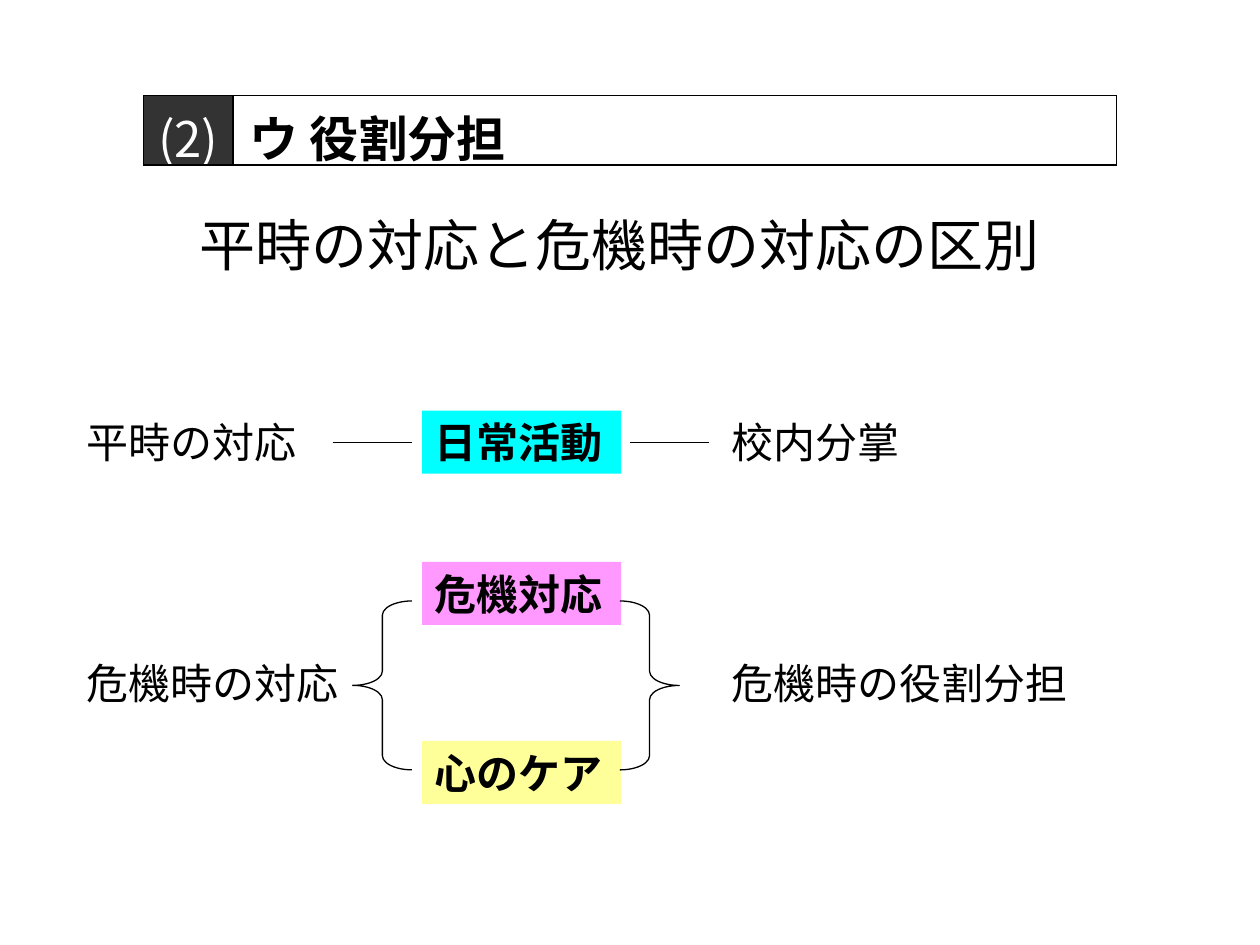
from dataclasses import dataclass

import pptx
import pptx.dml.color
import pptx.enum.shapes
import pptx.enum.text
import pptx.oxml
import pptx.util
from pptx.util import Inches

SHAPE = pptx.enum.shapes.MSO_SHAPE
ALIGN = pptx.enum.text.PP_ALIGN
ANCHOR = pptx.enum.text.MSO_ANCHOR
NS = 'xmlns:a="http://schemas.openxmlformats.org/drawingml/2006/main"'


@dataclass(frozen=True)
class Theme:
    black: str = "000000"
    white: str = "FFFFFF"
    dark: str = "333333"
    cyan: str = "00FFFF"
    pink: str = "FF99FF"
    yellow: str = "FFFF99"
    latin: str = "Arial"
    asian: str = "Noto Sans CJK JP"
    title: int = 32
    head: int = 28
    body: int = 24
    thin: float = 0.75
    border: float = 1


@dataclass(frozen=True)
class Label:
    text: str
    left: float
    top: float
    width: float
    fill: str = ""


THEME = Theme()
HEIGHT = 0.5
DAILY, CRISIS = 3.26, 5.17
LEFT, MIDDLE, RIGHT = 0.59, 3.35, 5.71
BOX = 1.58

LABELS = [
    Label("平時の対応", LEFT, DAILY, 1.97),
    Label("危機時の対応", LEFT, CRISIS, 2.36),
    Label("日常活動", MIDDLE, DAILY, BOX, THEME.cyan),
    Label("危機対応", MIDDLE, 4.46, BOX, THEME.pink),
    Label("心のケア", MIDDLE, 5.88, BOX, THEME.yellow),
    Label("校内分掌", RIGHT, DAILY, 1.97),
    Label("危機時の役割分担", RIGHT, CRISIS, 3.07),
]


def rgb(code: str):
    return pptx.dml.color.RGBColor.from_string(code)


def write(frame, text: str, size: int, face: str, color: str = THEME.black,
          bold: bool = False, align=ALIGN.LEFT) -> None:
    para = frame.paragraphs[0]
    para.text = text
    para.alignment = align
    font = para.font
    font.name, font.size, font.bold = face, pptx.util.Pt(size), bold
    font.color.rgb = rgb(color)


def stroke(line) -> None:
    line.color.rgb = rgb(THEME.black)
    line.width = pptx.util.Pt(THEME.thin)


def add_label(slide, label: Label) -> None:
    place = [Inches(n) for n in (label.left, label.top, label.width, HEIGHT)]
    if label.fill:
        shape = slide.shapes.add_shape(SHAPE.RECTANGLE, *place)
        shape.shadow.inherit = False
        shape.fill.solid()
        shape.fill.fore_color.rgb = rgb(label.fill)
        shape.line.fill.background()
    else:
        shape = slide.shapes.add_textbox(*place)
    frame = shape.text_frame
    frame.word_wrap = True
    frame.auto_size = pptx.enum.text.MSO_AUTO_SIZE.SHAPE_TO_FIT_TEXT
    frame.vertical_anchor = ANCHOR.TOP
    write(frame, label.text, THEME.body, THEME.latin, bold=bool(label.fill))


def add_brace(slide, left: float, turn: int) -> None:
    brace = slide.shapes.add_shape(SHAPE.LEFT_BRACE, Inches(left), Inches(4.77),
                                   Inches(0.47), Inches(1.34))
    brace.adjustments[0] = 0.24
    brace.rotation = turn
    brace.shadow.inherit = False
    brace.fill.background()
    stroke(brace.line)


def add_link(slide, left: float) -> None:
    level = Inches(DAILY + HEIGHT / 2)
    link = slide.shapes.add_connector(pptx.enum.shapes.MSO_CONNECTOR.STRAIGHT,
                                      Inches(left), level, Inches(left + 0.63), level)
    stroke(link.line)
    link._element.spPr.append(pptx.oxml.parse_xml(f"<a:effectLst {NS}/>"))


def style_cell(cell, fill: str) -> None:
    cell.margin_left = cell.margin_right = Inches(0.04)
    cell.margin_top = cell.margin_bottom = Inches(0.04)
    props = cell._tc.get_or_add_tcPr()
    for side in ("lnL", "lnR", "lnT", "lnB"):
        props.append(pptx.oxml.parse_xml(
            f'<a:{side} {NS} w="{pptx.util.Pt(THEME.border)}"><a:solidFill>'
            f'<a:srgbClr val="{THEME.black}"/></a:solidFill></a:{side}>'))
    cell.fill.solid()
    cell.fill.fore_color.rgb = rgb(fill)


def add_header(slide) -> None:
    table = slide.shapes.add_table(1, 2, Inches(1.14), Inches(0.76),
                                   Inches(7.72), Inches(0.55)).table
    for column, width in zip(table.columns, (0.71, 7.01)):
        column.width = Inches(width)
    mark, name = table.cell(0, 0), table.cell(0, 1)
    style_cell(mark, THEME.dark)
    style_cell(name, THEME.white)
    write(mark.text_frame, "(2)", THEME.head, THEME.asian, THEME.white, align=ALIGN.CENTER)
    write(name.text_frame, " ウ 役割分担", THEME.head, THEME.asian, bold=True)


def add_title(slide) -> None:
    box = slide.shapes.add_textbox(Inches(1.22), Inches(1.62), Inches(7.4), Inches(0.63))
    box.text_frame.word_wrap = True
    box.text_frame.vertical_anchor = ANCHOR.MIDDLE
    write(box.text_frame, "平時の対応と危機時の対応の区別", THEME.title, THEME.asian,
          align=ALIGN.CENTER)


def main() -> None:
    deck = pptx.Presentation()
    deck.slide_width, deck.slide_height = Inches(10), Inches(7.5)
    slide = deck.slides.add_slide(deck.slide_layouts[6])

    # Heading
    add_title(slide)
    add_header(slide)

    # Duties in calm and in crisis
    for label in LABELS:
        add_label(slide, label)

    # Braces and links between the columns
    for left, turn in ((2.8, 0), (4.92, 180)):
        add_brace(slide, left, turn)
    for left in (2.64, 5):
        add_link(slide, left)

    deck.save("out.pptx")


if __name__ == "__main__":
    main()
